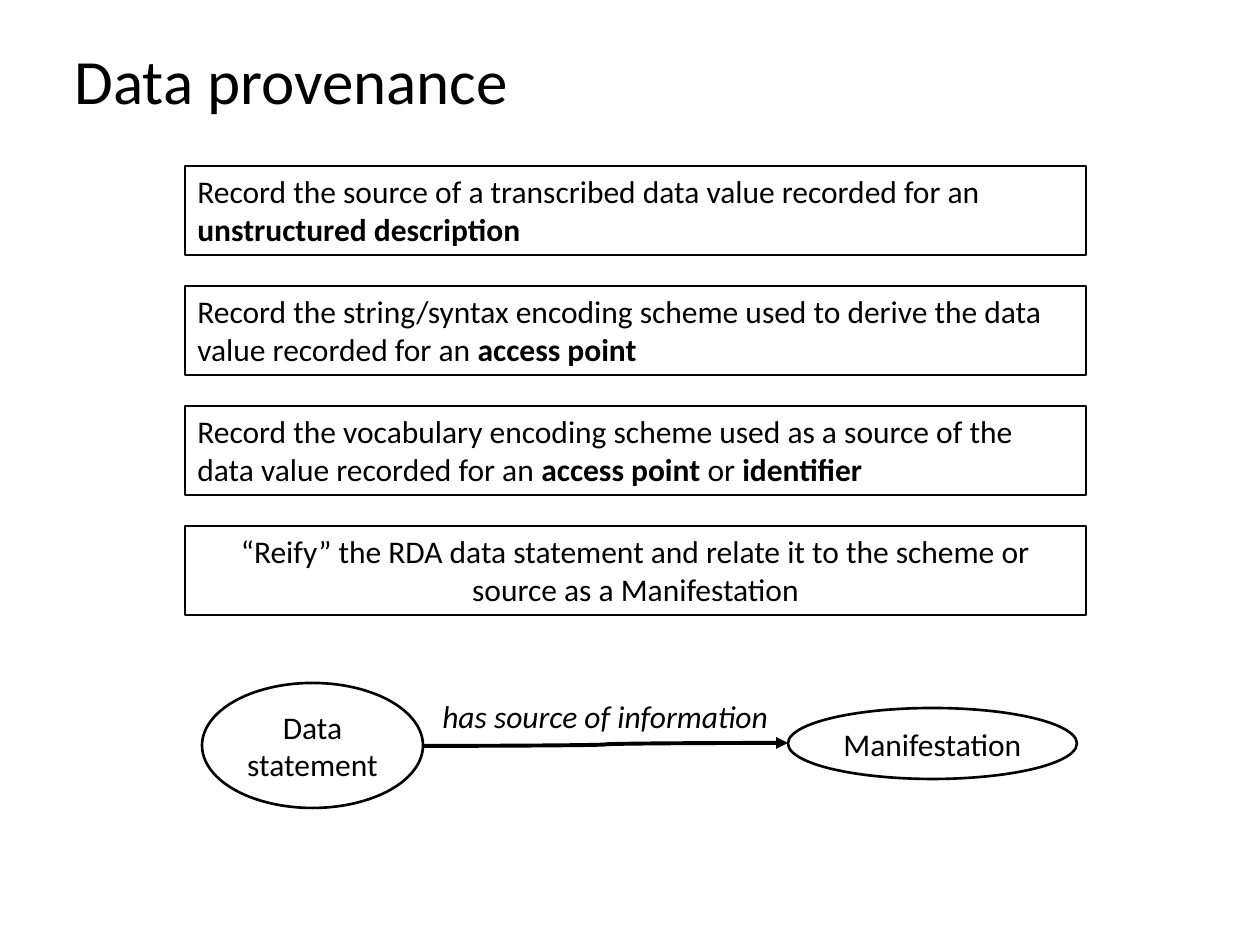
"""Build the data provenance slide."""
from dataclasses import dataclass

from lxml import etree
from pptx import Presentation
from pptx.dml.color import RGBColor
from pptx.enum.shapes import MSO_CONNECTOR, MSO_SHAPE
from pptx.enum.text import MSO_ANCHOR, PP_ALIGN
from pptx.oxml.ns import qn
from pptx.util import Emu, Pt

RECT, OVAL = MSO_SHAPE.RECTANGLE, MSO_SHAPE.OVAL
CURVE = MSO_CONNECTOR.CURVE
LEFT, CENTER = PP_ALIGN.LEFT, PP_ALIGN.CENTER
TOP, MIDDLE = MSO_ANCHOR.TOP, MSO_ANCHOR.MIDDLE
EMU_PER_PX = 914400 / 126
BOLD, ITALIC = {"bold": True}, {"italic": True}


@dataclass(frozen=True)
class Theme:
    font: str = "Calibri"
    ink: RGBColor = RGBColor(0, 0, 0)
    title: float = 36
    body: float = 18
    outline: float = 1.5
    arrow: float = 2.25


def px(n):
    return Emu(round(n * EMU_PER_PX))


class Canvas:
    def __init__(self, slide, theme):
        self.shapes = slide.shapes
        self.theme = theme

    def fill_text(self, sp, paragraphs, size, align, anchor, wrap):
        tf = sp.text_frame
        tf.word_wrap = wrap
        tf.vertical_anchor = anchor
        for i, runs in enumerate(paragraphs):
            p = tf.add_paragraph() if i else tf.paragraphs[0]
            p.alignment = align
            for text, extra in runs:
                r = p.add_run()
                r.text = text
                r.font.color.rgb = self.theme.ink
                fmt = {"name": self.theme.font, "size": Pt(size), **extra}
                for key, value in fmt.items():
                    setattr(r.font, key, value)

    def stroke(self, sp, width):
        sp.line.color.rgb = self.theme.ink
        sp.line.width = Pt(width)

    def text(self, box, paragraphs, size):
        sp = self.shapes.add_textbox(*map(px, box))
        self.fill_text(sp, paragraphs, size, LEFT, TOP, False)

    def outlined(self, kind, box, paragraphs, align=CENTER, anchor=MIDDLE, wrap=False):
        sp = self.shapes.add_shape(kind, *map(px, box))
        sp.shadow.inherit = False
        sp.fill.background()
        self.stroke(sp, self.theme.outline)
        self.fill_text(sp, paragraphs, self.theme.body, align, anchor, wrap)

    def arrow(self, start, end):
        sp = self.shapes.add_connector(CURVE, *map(px, start + end))
        self.stroke(sp, self.theme.arrow)
        ln = sp._element.spPr.find(qn("a:ln"))
        etree.SubElement(ln, qn("a:tailEnd"), type="triangle")
        etree.SubElement(sp._element.spPr, qn("a:effectLst"))


def main():
    prs = Presentation()
    prs.slide_width, prs.slide_height = px(1260), px(945)
    theme = Theme()
    s = Canvas(prs.slides.add_slide(prs.slide_layouts[6]), theme)

    s.text((62, 35, 462, 89), [[("Data provenance", {})]], theme.title)

    statements = [
        (LEFT, [("Record the source of a transcribed data value recorded for an ", {}),
                ("unstructured description", BOLD)]),
        (LEFT, [("Record the string/syntax encoding scheme used to derive the data "
                 "value recorded for an ", {}),
                ("access point", BOLD)]),
        (LEFT, [("Record the vocabulary encoding scheme used as a source of the "
                 "data value recorded for an ", {}),
                ("access point ", BOLD), ("or ", {}), ("identifier", BOLD)]),
        (CENTER, [("“Reify” the RDA data statement and relate it to the scheme or "
                   "source as a Manifestation", {})]),
    ]
    for i, (align, runs) in enumerate(statements):
        s.outlined(RECT, (185, 166 + 120 * i, 901, 89), [runs], align, TOP, True)

    s.outlined(OVAL, (202, 683, 221, 125), [[("Data", {})], [("statement", {})]])
    s.outlined(OVAL, (788, 708, 289, 71), [[("Manifestation", {})]])
    s.arrow((423, 746), (788, 743))
    s.text((430, 691, 355, 50), [[("has source of information", ITALIC)]], theme.body)

    prs.save("out.pptx")


if __name__ == "__main__":
    main()
